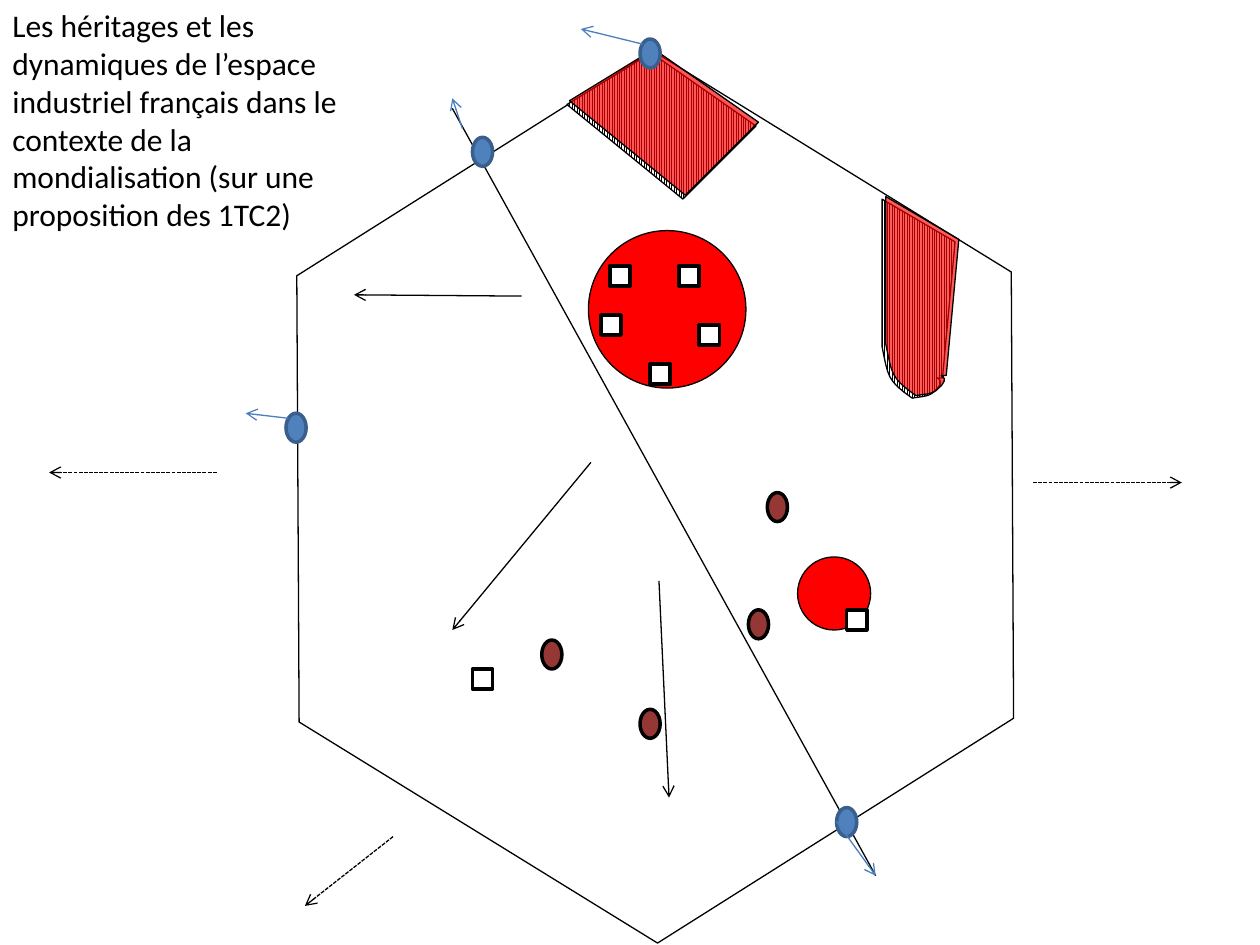
"""Build the sketch map of French industrial space."""
from lxml import etree
from pptx import Presentation
from pptx import util as u
from pptx.dml.color import RGBColor
from pptx.enum import dml, shapes, text
from pptx.oxml.ns import qn

BLACK = RGBColor(0, 0, 0)
WHITE = RGBColor(255, 255, 255)
RED = RGBColor(255, 0, 0)
BROWN = RGBColor(0x95, 0x37, 0x35)
BLUE = RGBColor(0x4F, 0x81, 0xBD)
NAVY = RGBColor(0x3A, 0x5F, 0x8C)
SKY = RGBColor(0x4B, 0x7E, 0xBC)

SHAPE = shapes.MSO_SHAPE
NORTH = [(4.5, 0.83), (5.42, 1.58), (6, 1), (5.17, 0.42)]
EAST = [
    (7, 1.58), (7, 2.75),
    ((7.05, 2.99), (7.04, 3.02), (7.24, 3.16)),
    ((7.29, 3.15), (7.36, 3.15), (7.4, 3.12)),
    ((7.56, 2.99), (7.36, 3), (7.48, 3)),
    (7.58, 1.92),
]
PORTS = [(3.75, 1.09), (5.08, 0.31), (2.27, 3.28), (6.64, 6.41)]
FLOWS = [
    (5.1, 0.35, 4.61, 0.23), (3.67, 1.02, 3.59, 0.78),
    (2.29, 3.32, 1.95, 3.28), (6.64, 6.52, 6.95, 6.95),
]
MOVES = [
    (4.14, 2.35, 2.81, 2.34), (4.69, 3.67, 3.59, 5),
    (5.23, 4.61, 5.31, 6.33),
]
POLES = [
    (4.84, 2.11), (5.39, 2.11), (5.16, 2.89), (5.55, 2.58),
    (4.77, 2.5), (6.72, 4.84), (3.75, 5.31),
]
EXITS = [
    (1.72, 3.75, 0.39, 3.75), (3.12, 6.64, 2.42, 7.19),
    (8.2, 3.83, 9.38, 3.83),
]
SITES = [(6.09, 3.91), (5.08, 5.63), (4.3, 5.08), (5.94, 4.84)]


def add_shape(tree, kind, box, fill, line=BLACK, width=0.75):
    """Add a preset shape with a plain fill and outline."""
    shape = tree.add_shape(kind, *map(u.Inches, box))
    shape.shadow.inherit = False
    shape.fill.solid()
    shape.fill.fore_color.rgb = fill
    shape.line.color.rgb = line
    shape.line.width = u.Pt(width)
    return shape


def add_line(tree, ends, color=BLACK, arrow=True, dash=None):
    """Add a straight connector, with an arrowhead if wanted."""
    kind = shapes.MSO_CONNECTOR.STRAIGHT
    line = tree.add_connector(kind, *map(u.Inches, ends))
    line.line.color.rgb = color
    line.line.width = u.Pt(0.75)
    if dash:
        line.line.dash_style = dash
    if arrow:
        etree.SubElement(line.line._get_or_add_ln(), qn("a:tailEnd"), type="arrow")
    etree.SubElement(line._element.spPr, qn("a:effectLst"))


def trace(path, steps=8):
    """Turn corners and Bezier curves into a list of points."""
    points = []
    for part in path:
        if len(part) == 2:
            points.append(part)
            continue
        curve = (points[-1], *part)
        for step in range(1, steps + 1):
            t = step / steps
            terms = ((1 - t) ** 3, 3 * t * (1 - t) ** 2, 3 * t * t * (1 - t), t ** 3)
            points.append(tuple(
                sum(k * p[axis] for k, p in zip(terms, curve)) for axis in (0, 1)
            ))
    return points


def add_zone(tree, path, shift=(0, 0), alpha=None):
    """Add a hatched zone, or a red see-through one if alpha is given."""
    points = [
        (u.Inches(x + shift[0]), u.Inches(y + shift[1])) for x, y in trace(path)
    ]
    form = tree.build_freeform(*points[0])
    form.add_line_segments(points[1:], close=True)
    zone = form.convert_to_shape()
    zone.shadow.inherit = False
    zone.line.color.rgb = BLACK
    zone.line.width = u.Pt(0.75)
    if alpha:
        zone.fill.solid()
        zone.fill.fore_color.rgb = RED
        color = zone._element.spPr.find(qn("a:solidFill"))[0]
        etree.SubElement(color, qn("a:alpha"), val=str(alpha * 1000))
    else:
        zone.fill.patterned()
        zone.fill.pattern = dml.MSO_PATTERN.LIGHT_VERTICAL
        zone.fill.fore_color.rgb = BLACK
        zone.fill.back_color.rgb = WHITE


def add_text(tree, words, box, size=18, font="Calibri", color=BLACK):
    """Add a wrapped text box."""
    shape = tree.add_textbox(*map(u.Inches, box))
    frame = shape.text_frame
    frame.word_wrap = True
    frame.auto_size = text.MSO_AUTO_SIZE.SHAPE_TO_FIT_TEXT
    run = frame.paragraphs[0].add_run()
    run.text = words
    run.font.size = u.Pt(size)
    run.font.name = font
    run.font.color.rgb = color


def main():
    """Draw the map and save it."""
    deck = Presentation()
    deck.slide_width, deck.slide_height = u.Inches(10), u.Inches(7.5)
    tree = deck.slides.add_slide(deck.slide_layouts[6]).shapes

    land = add_shape(tree, SHAPE.HEXAGON, (1.66, 1.11, 7.08, 5.67), WHITE)
    land.adjustments[0] = 0.312
    land.adjustments[1] = 1.155
    land.rotation = 89.7

    add_zone(tree, NORTH)
    add_zone(tree, EAST)
    add_shape(tree, SHAPE.OVAL, (4.67, 1.83, 1.25, 1.25), RED)
    add_zone(tree, NORTH, shift=(0.02, -0.03), alpha=66)
    add_zone(tree, EAST, shift=(0.03, -0.02), alpha=64)
    add_shape(tree, SHAPE.OVAL, (6.33, 4.42, 0.58, 0.58), RED)
    add_line(tree, (3.59, 0.86, 6.95, 6.95), arrow=False)

    for spot in PORTS:
        add_shape(tree, SHAPE.OVAL, (*spot, 0.16, 0.23), BLUE, NAVY, 2)
    for ends in FLOWS:
        add_line(tree, ends, SKY)
    for ends in MOVES:
        add_line(tree, ends)
    for spot in POLES:
        add_shape(tree, SHAPE.RECTANGLE, (*spot, 0.16, 0.16), WHITE, width=2)
    for ends in EXITS:
        add_line(tree, ends, dash=dml.MSO_LINE.SQUARE_DOT)
    for spot in SITES:
        add_shape(tree, SHAPE.OVAL, (*spot, 0.16, 0.23), BROWN, width=2)

    add_text(
        tree,
        "Les héritages et les dynamiques de l’espace industriel français dans "
        "le contexte de la mondialisation (sur une proposition des 1TC2)",
        (0, 0, 2.97, 1.92),
    )
    deck.save("out.pptx")


if __name__ == "__main__":
    main()
